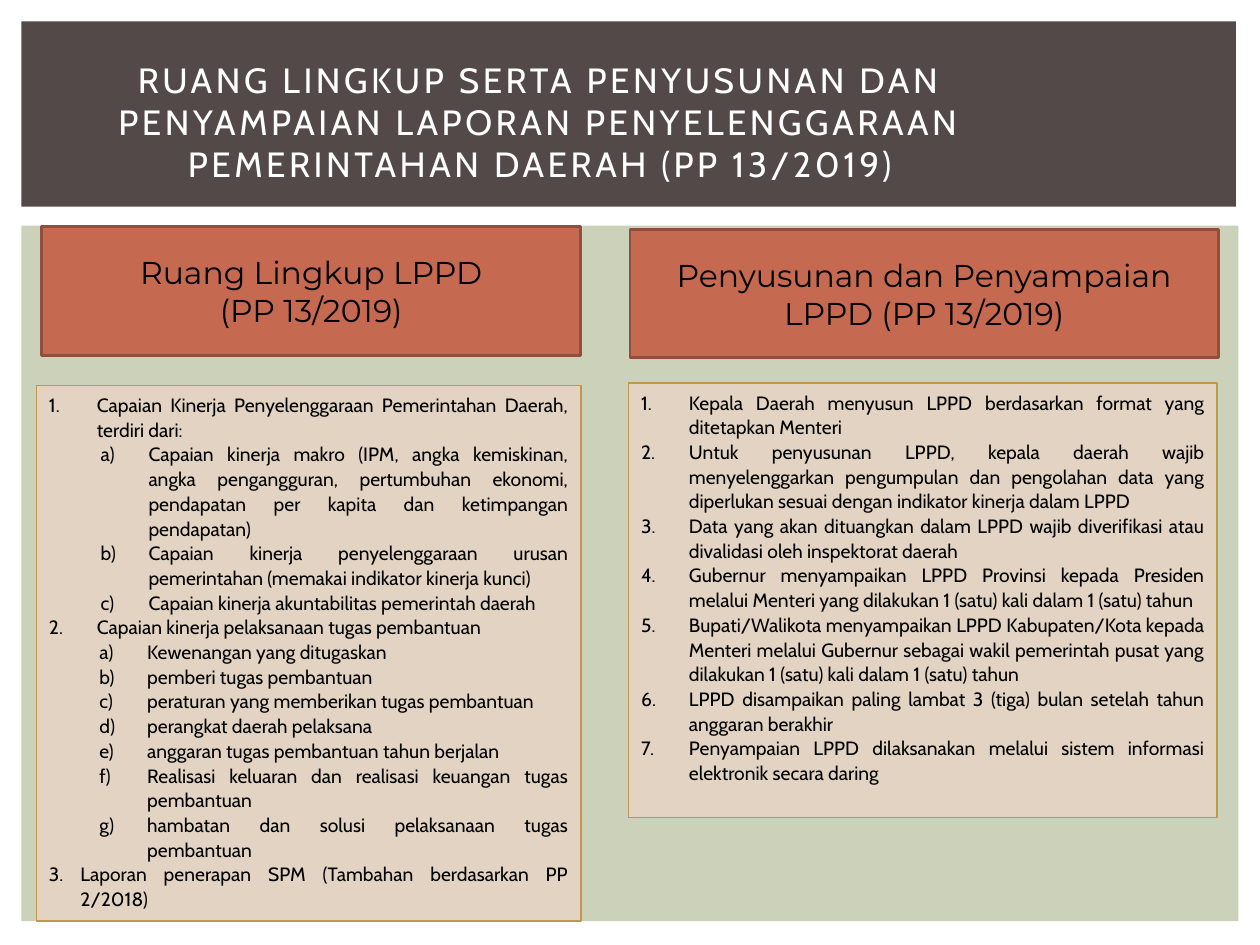
from lxml import etree
from pptx import Presentation
from pptx.dml.color import RGBColor
from pptx.enum.shapes import MSO_SHAPE
from pptx.enum.text import MSO_ANCHOR, PP_ALIGN
from pptx.oxml.ns import qn
from pptx.util import Inches, Pt

RECTANGLE = MSO_SHAPE.RECTANGLE
TOP, MIDDLE = MSO_ANCHOR.TOP, MSO_ANCHOR.MIDDLE
CENTER, JUSTIFY = PP_ALIGN.CENTER, PP_ALIGN.JUSTIFY

WIDTH, HEIGHT = Inches(10), Inches(7.5)
BLANK_LAYOUT = 6
BODY_FONT, HEADING_FONT = "Cabin", "Montserrat"
SAGE, BROWN, WHITE, BLACK = "CCD1B9", "534949", "FFFFFF", "000000"
HEADING_FILL, HEADING_LINE = "C66951", "924E3C"
LIST_FILL, LIST_LINE = "E2D3C2", "BF974D"
HANGING = 0.38

TITLE = ("RUANG LINGKUP SERTA PENYUSUNAN DAN PENYAMPAIAN LAPORAN "
         "PENYELENGGARAAN PEMERINTAHAN DAERAH (PP 13/2019)")

# Each item: text, sub-items, indent of the item, indent of its sub-items
SCOPE = [
    ("Capaian Kinerja Penyelenggaraan Pemerintahan Daerah, terdiri dari:", [
        "Capaian kinerja makro (IPM, angka kemiskinan, angka pengangguran, "
        "pertumbuhan ekonomi, pendapatan per kapita dan ketimpangan pendapatan)",
        "Capaian kinerja penyelenggaraan urusan pemerintahan "
        "(memakai indikator kinerja kunci)",
        "Capaian kinerja akuntabilitas pemerintah daerah",
    ], HANGING, 0.79),
    ("Capaian kinerja pelaksanaan tugas pembantuan", [
        "Kewenangan yang ditugaskan",
        "pemberi tugas pembantuan",
        "peraturan yang memberikan tugas pembantuan",
        "perangkat daerah pelaksana",
        "anggaran tugas pembantuan tahun berjalan",
        "Realisasi keluaran dan realisasi keuangan tugas pembantuan",
        "hambatan dan solusi pelaksanaan tugas pembantuan",
    ], HANGING, 0.78),
    ("Laporan penerapan SPM (Tambahan berdasarkan PP 2/2018)", [], 0.25, 0),
]

SUBMISSION = [
    "Kepala Daerah menyusun LPPD berdasarkan format yang ditetapkan Menteri",
    "Untuk penyusunan LPPD, kepala daerah wajib menyelenggarkan pengumpulan dan "
    "pengolahan data yang diperlukan sesuai dengan indikator kinerja dalam LPPD",
    "Data yang akan dituangkan dalam LPPD wajib diverifikasi atau divalidasi "
    "oleh inspektorat daerah",
    "Gubernur menyampaikan LPPD Provinsi kepada Presiden melalui Menteri yang "
    "dilakukan 1 (satu) kali dalam 1 (satu) tahun",
    "Bupati/Walikota menyampaikan LPPD Kabupaten/Kota kepada Menteri melalui "
    "Gubernur sebagai wakil pemerintah pusat yang dilakukan 1 (satu) kali "
    "dalam 1 (satu) tahun",
    "LPPD disampaikan paling lambat 3 (tiga) bulan setelah tahun anggaran berakhir",
    "Penyampaian LPPD dilaksanakan melalui sistem informasi elektronik secara daring",
]


def color(hex_string):
    return RGBColor.from_string(hex_string)


def place(left, top, width, height):
    """Turn percentages of the slide's size into lengths."""
    return [int(share * side / 100) for share, side in
            zip((left, top, width, height), (WIDTH, HEIGHT) * 2)]


def add_panel(page, area, fill, line=None, line_width=0):
    panel = page.shapes.add_shape(RECTANGLE, *place(*area))
    panel.shadow.inherit = False
    panel.fill.solid()
    panel.fill.fore_color.rgb = color(fill)
    if line:
        panel.line.color.rgb = color(line)
        panel.line.width = Pt(line_width)
    else:
        panel.line.fill.background()
    return panel


def write(box, text, font, size, ink, align, anchor):
    """Fill a box with text, one paragraph a line, in a single style."""
    frame = box.text_frame
    frame.word_wrap = True
    frame.vertical_anchor = anchor
    frame.text = text
    for para in frame.paragraphs:
        para.alignment = align
        for span in para.runs:
            span.font.name = font
            span.font.size = Pt(size)
            span.font.color.rgb = color(ink)
    return frame.paragraphs


def number_paragraph(para, scheme, start, indent, hanging):
    para.line_spacing = 1.07
    properties = para._p.get_or_add_pPr()
    properties.set("marL", str(Inches(indent)))
    properties.set("indent", str(-Inches(hanging)))
    numbering = etree.SubElement(properties, qn("a:buAutoNum"), type=scheme)
    if start > 1:
        numbering.set("startAt", str(start))


def add_title(page):
    box = page.shapes.add_textbox(*place(4.2, 5.2, 77.3, 15.33))
    for para in write(box, TITLE, BODY_FONT, 20, WHITE, CENTER, MIDDLE):
        for span in para.runs:
            span.font._element.set("spc", "200")


def add_heading(page, area, text):
    panel = add_panel(page, area, HEADING_FILL, HEADING_LINE, 1.5)
    write(panel, text, HEADING_FONT, 18, BLACK, CENTER, MIDDLE)


def add_list(page, area, lines):
    panel = add_panel(page, area, LIST_FILL, LIST_LINE, 0.79)
    return write(panel, "\n".join(lines), BODY_FONT, 11, BLACK, JUSTIFY, TOP)


def add_scope_list(page, area):
    lines = [line for item, details, *_ in SCOPE for line in (item, *details)]
    paras = iter(add_list(page, area, lines))
    for number, (_, details, indent, detail_indent) in enumerate(SCOPE, 1):
        number_paragraph(next(paras), "arabicPeriod", number, indent, indent)
        for _ in details:
            para = next(paras)
            para.level = 1
            number_paragraph(para, "alphaLcParenR", 1, detail_indent, HANGING)


def add_submission_list(page, area):
    for para in add_list(page, area, SUBMISSION):
        number_paragraph(para, "arabicPeriod", 1, HANGING, HANGING)


def main():
    deck = Presentation()
    deck.slide_width, deck.slide_height = WIDTH, HEIGHT
    page = deck.slides.add_slide(deck.slide_layouts[BLANK_LAYOUT])

    add_panel(page, (1.7, 23.87, 96.6, 73.6), SAGE)
    add_panel(page, (1.7, 2.27, 96.4, 19.6), BROWN)
    add_title(page)

    add_heading(page, (3.3, 24, 42.8, 13.6), "Ruang Lingkup LPPD\n(PP 13/2019)")
    add_scope_list(page, (2.9, 40.8, 43.2, 56.67))

    add_heading(page, (50, 24.27, 46.7, 13.6),
                "Penyusunan dan Penyampaian LPPD (PP 13/2019)")
    add_submission_list(page, (49.9, 40.53, 46.7, 46))

    deck.save("out.pptx")


if __name__ == "__main__":
    main()
